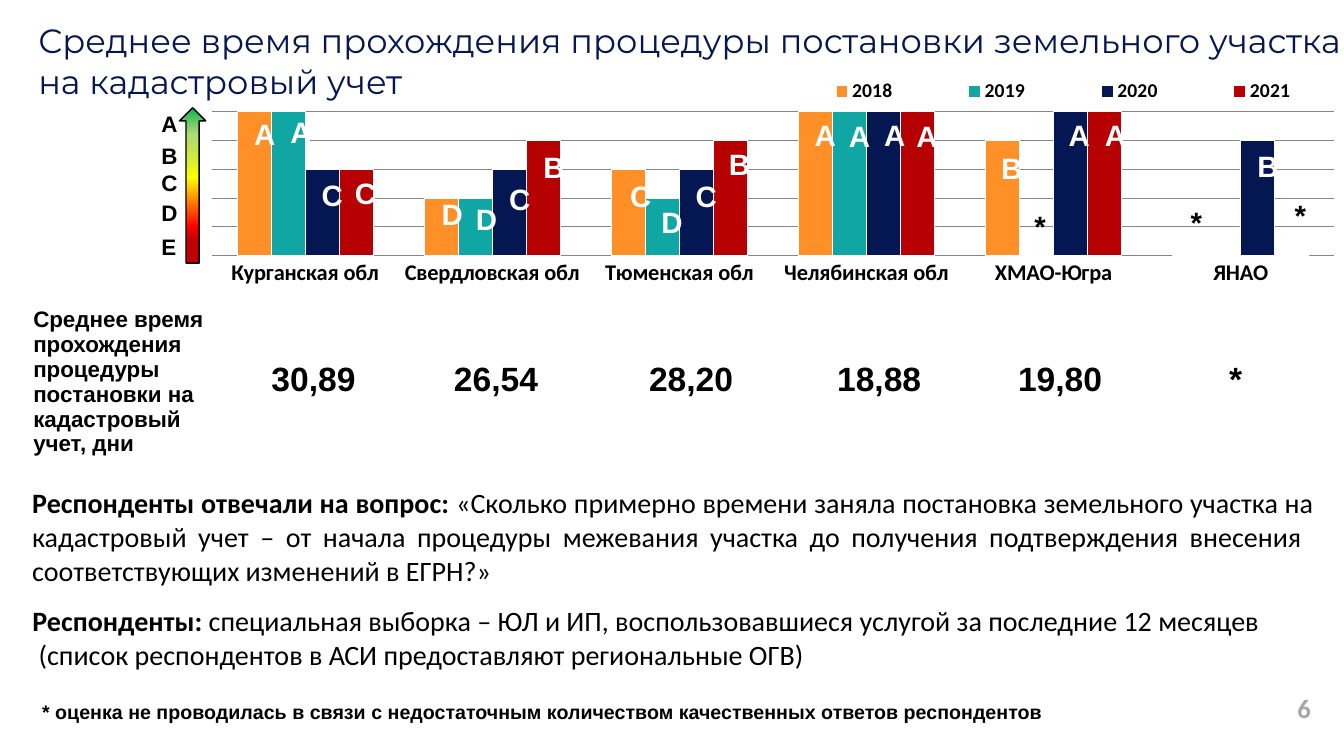
"""Build a slide on the average time of registering a land plot."""
from lxml import etree
from pptx import Presentation
from pptx import util as u
from pptx.chart import data as chart_data
from pptx.dml import color as dml
from pptx.enum import chart as ch
from pptx.enum import shapes, text
from pptx.oxml import parse_xml
from pptx.oxml import ns

ALIGN = text.PP_ALIGN
ANCHOR = text.MSO_ANCHOR
INSETS = (0.13, 0.07)
NAVY, BLACK, WHITE, GRID = "041752", "000000", "FFFFFF", "868686"

REGIONS = ["Курганская обл", "Свердловская обл", "Тюменская обл",
           "Челябинская обл", "ХМАО-Югра", "ЯНАО"]
YEARS = [
    ("2018", (100, 40, 60, 100, 80, 0), "FF9028"),
    ("2019", (100, 40, 40, 100, 0, 0), "10A6A4"),
    ("2020", (60, 60, 60, 100, 100, 80), NAVY),
    ("2021", (60, 80, 80, 100, 100, 0), "B70002"),
]
SCALE = [("A", 1.02), ("B", 1.34), ("C", 1.61), ("D", 1.91), ("E", 2.24)]
GRADES = [
    ("А", 2.39, 1.08), ("А", 2.75, 1.06), ("С", 3.06, 1.69), ("С", 3.39, 1.67),
    ("D", 4.25, 1.88), ("D", 4.59, 1.92), ("C", 4.92, 1.73), ("В", 5.26, 1.41),
    ("C", 6.12, 1.7), ("D", 6.43, 1.95), ("C", 6.77, 1.7), ("B", 7.1, 1.38),
    ("A", 7.95, 1.09), ("A", 8.29, 1.1), ("A", 8.64, 1.09), ("A", 8.96, 1.1),
    ("B", 9.8, 1.42), ("*", 10.13, 1.99), ("A", 10.47, 1.09), ("А", 10.83, 1.09),
    ("*", 11.68, 1.95), ("B", 12.34, 1.4), ("*", 12.71, 1.89),
]
DAYS = ["30,89", "26,54", "28,20", "18,88", "19,80", "*"]
DAYS_LABEL = "Среднее время прохождения процедуры постановки на кадастровый учет, дни"
COLUMNS = [2.12, 1.58, 2.04, 1.83, 1.9, 1.69, 1.79]
ARROW_STOPS = [(15, "C00000", 100), (24, "FF0000", 100), (55, "FFFF00", 100),
               (83, "92D050", 76), (100, "00B050", 100)]


def rgb(value):
    """Turn a hex string into a colour."""
    return dml.RGBColor.from_string(value)


def style_font(font, size, color=BLACK, name="Arial", bold=False):
    """Set the look of a font."""
    font.size, font.name, font.bold = u.Pt(size), name, bold
    font.color.rgb = rgb(color)


def write(para, content, align=ALIGN.LEFT, **style):
    """Add formatted text to a paragraph, breaking it at line ends."""
    para.alignment = align
    for number, line in enumerate(content.split("\n")):
        if number:
            para.add_line_break()
        span = para.add_run()
        span.text = line
        style_font(span.font, **style)


def set_layout(element, x, y, width, height, inner=False):
    """Place a chart part by fractions of the chart area."""
    for old in element.findall(ns.qn("c:layout")):
        element.remove(old)
    layout = etree.Element(ns.qn("c:layout"))
    manual = etree.SubElement(layout, ns.qn("c:manualLayout"))
    values = [("xMode", "edge"), ("yMode", "edge"), ("x", x), ("y", y),
              ("w", width), ("h", height)]
    if inner:
        values.insert(0, ("layoutTarget", "inner"))
    for tag, value in values:
        etree.SubElement(manual, ns.qn("c:" + tag)).set("val", str(value))
    position = element.find(ns.qn("c:legendPos"))
    if position is None:
        element.insert(0, layout)
    else:
        position.addnext(layout)


class SlideBuilder:
    """Hold the current slide and add elements to it."""

    def __init__(self, deck):
        """Start a slide that has only a title."""
        self.slide = deck.slides.add_slide(deck.slide_layouts[5])

    def frame(self, box, anchor=ANCHOR.TOP, insets=INSETS):
        """Prepare the text frame of a box."""
        frame = box.text_frame
        frame.word_wrap = True
        frame.auto_size = text.MSO_AUTO_SIZE.NONE
        frame.vertical_anchor = anchor
        frame.margin_left = frame.margin_right = u.Inches(insets[0])
        frame.margin_top = frame.margin_bottom = u.Inches(insets[1])
        return frame.paragraphs[0]

    def title(self, content, left, top, width, height, **style):
        """Fill and place the title placeholder."""
        box = self.slide.shapes.title
        box.left, box.top = u.Inches(left), u.Inches(top)
        box.width, box.height = u.Inches(width), u.Inches(height)
        write(self.frame(box), content, **style)

    def label(self, spans, left, top, width, height, anchor=ANCHOR.TOP,
              insets=INSETS, **style):
        """Add a text box of (text, bold) spans."""
        box = self.slide.shapes.add_textbox(
            u.Inches(left), u.Inches(top), u.Inches(width), u.Inches(height))
        para = self.frame(box, anchor, insets)
        for content, bold in spans:
            write(para, content, bold=bold, **style)

    def arrow(self, left, top, width, height):
        """Add the upward arrow of the grade scale."""
        arrow = self.slide.shapes.add_shape(
            shapes.MSO_SHAPE.DOWN_ARROW, u.Inches(left), u.Inches(top),
            u.Inches(width), u.Inches(height))
        arrow.rotation = 180
        arrow.shadow.inherit = False
        arrow.line.color.rgb = rgb(BLACK)
        arrow.line.width = u.Pt(1)
        stops = "".join(
            f'<a:gs pos="{place * 1000}"><a:srgbClr val="{color}">'
            f'<a:alpha val="{alpha * 1000}"/></a:srgbClr></a:gs>'
            for place, color, alpha in ARROW_STOPS)
        gradient = parse_xml(
            f'<a:gradFill {ns.nsdecls("a")} rotWithShape="1"><a:gsLst>{stops}'
            '</a:gsLst><a:lin ang="5400000" scaled="0"/></a:gradFill>')
        arrow._element.spPr.find(ns.qn("a:prstGeom")).addnext(gradient)

    def chart(self, left, top, width, height):
        """Add the column chart of grades by region and year."""
        data = chart_data.CategoryChartData()
        data.categories = REGIONS
        for year, values, _ in YEARS:
            data.add_series(year, values)
        chart = self.slide.shapes.add_chart(
            ch.XL_CHART_TYPE.COLUMN_CLUSTERED, u.Inches(left), u.Inches(top),
            u.Inches(width), u.Inches(height), data).chart
        chart.has_title = False
        style_font(chart.font, 18, name="Calibri")
        plot = chart.plots[0]
        plot.gap_width, plot.overlap, plot.vary_by_categories = 150, 0, False
        for series, (_, _, color) in zip(plot.series, YEARS):
            series.format.fill.solid()
            series.format.fill.fore_color.rgb = rgb(color)
            series.format.line.color.rgb = rgb(WHITE)
            series.format.line.width = u.Pt(0.75)
        scale, regions = chart.value_axis, chart.category_axis
        scale.minimum_scale, scale.maximum_scale, scale.major_unit = 0, 100, 20
        scale.visible = False
        scale.major_gridlines.format.line.color.rgb = rgb(GRID)
        regions.major_tick_mark = ch.XL_TICK_MARK.NONE
        regions.format.line.color.rgb = rgb(GRID)
        style_font(regions.tick_labels.font, 16, name="Calibri", bold=True)
        chart.has_legend = True
        legend = chart.legend
        legend.position = ch.XL_LEGEND_POSITION.BOTTOM
        legend.include_in_layout = False
        style_font(legend.font, 14, name="Calibri", bold=True)
        space = chart._chartSpace
        set_layout(legend._element, 0.54, 0.18, 0.46, 0.11)
        set_layout(space.chart.plotArea, 0.11, 0.3, 0.87, 0.45, inner=True)
        space.chart.addnext(parse_xml(
            f'<c:spPr {ns.nsdecls("c", "a")}><a:noFill/><a:ln><a:noFill/></a:ln></c:spPr>'))

    def table(self, left, top, height):
        """Add the row of average days."""
        table = self.slide.shapes.add_table(
            1, len(COLUMNS), u.Inches(left), u.Inches(top),
            u.Inches(sum(COLUMNS)), u.Inches(height)).table
        table.first_row = table.horz_banding = False
        for index, (width, content) in enumerate(zip(COLUMNS, [DAYS_LABEL] + DAYS)):
            table.columns[index].width = u.Inches(width)
            cell = table.cell(0, index)
            cell.fill.background()
            cell.margin_left = cell.margin_right = u.Inches(INSETS[0])
            cell.margin_top = cell.margin_bottom = u.Inches(INSETS[1])
            para = cell.text_frame.paragraphs[0]
            if index:
                cell.vertical_anchor = ANCHOR.MIDDLE
                para.line_spacing = u.Pt(16)
                write(para, content, align=ALIGN.CENTER, size=24, bold=True)
            else:
                write(para, content, size=16, bold=True)


def main():
    """Build and save the deck."""
    deck = Presentation()
    deck.slide_width, deck.slide_height = u.Inches(13.33), u.Inches(7.5)
    page = SlideBuilder(deck)
    page.title("Среднее время прохождения процедуры постановки земельного участка "
               "на кадастровый учет", 0.25, 0.13, 13.33, 0.94,
               size=24, color=NAVY, name="Montserrat")
    page.label([("6", True)], 12.64, 6.82, 0.49, 0.4, anchor=ANCHOR.MIDDLE,
               align=ALIGN.RIGHT, size=19, color="A6A6A6", name="Calibri")
    page.chart(0.69, 0.16, 12.8, 3.17)
    page.arrow(1.78, 1.07, 0.26, 1.54)
    for grade, top in SCALE:
        page.label([(grade, True)], 1.47, top, 0.27, 0.4, align=ALIGN.CENTER, size=16)
    for grade, left, top in GRADES:
        page.label([(grade, True)], left, top, 0.27, 0.49, align=ALIGN.CENTER,
                   size=21, color=BLACK if grade == "*" else WHITE)
    page.table(0.2, 2.98, 1.73)
    page.label([("Респонденты отвечали на вопрос: ", True),
                ("«Сколько примерно времени заняла постановка земельного участка на "
                 "кадастровый учет – от начала процедуры межевания участка до получения "
                 "подтверждения внесения \nсоответствующих изменений в ЕГРН?»", False)],
               0.22, 4.77, 12.91, 1.11, insets=(0.1, 0.05), align=ALIGN.JUSTIFY,
               size=20, name="Calibri")
    page.label([("Респонденты:", True),
                (" специальная выборка – ЮЛ и ИП, воспользовавшиеся услугой за последние "
                 "12 месяцев\n (список респондентов в АСИ предоставляют региональные ОГВ)",
                 False)], 0.19, 5.92, 12.49, 0.81, size=20, name="Calibri")
    page.label([("* оценка не проводилась в связи с недостаточным количеством "
                 "качественных ответов респондентов", True)],
               0.32, 6.89, 12.14, 0.34, insets=(0.1, 0.05), size=14)
    deck.save("out.pptx")


if __name__ == "__main__":
    main()
